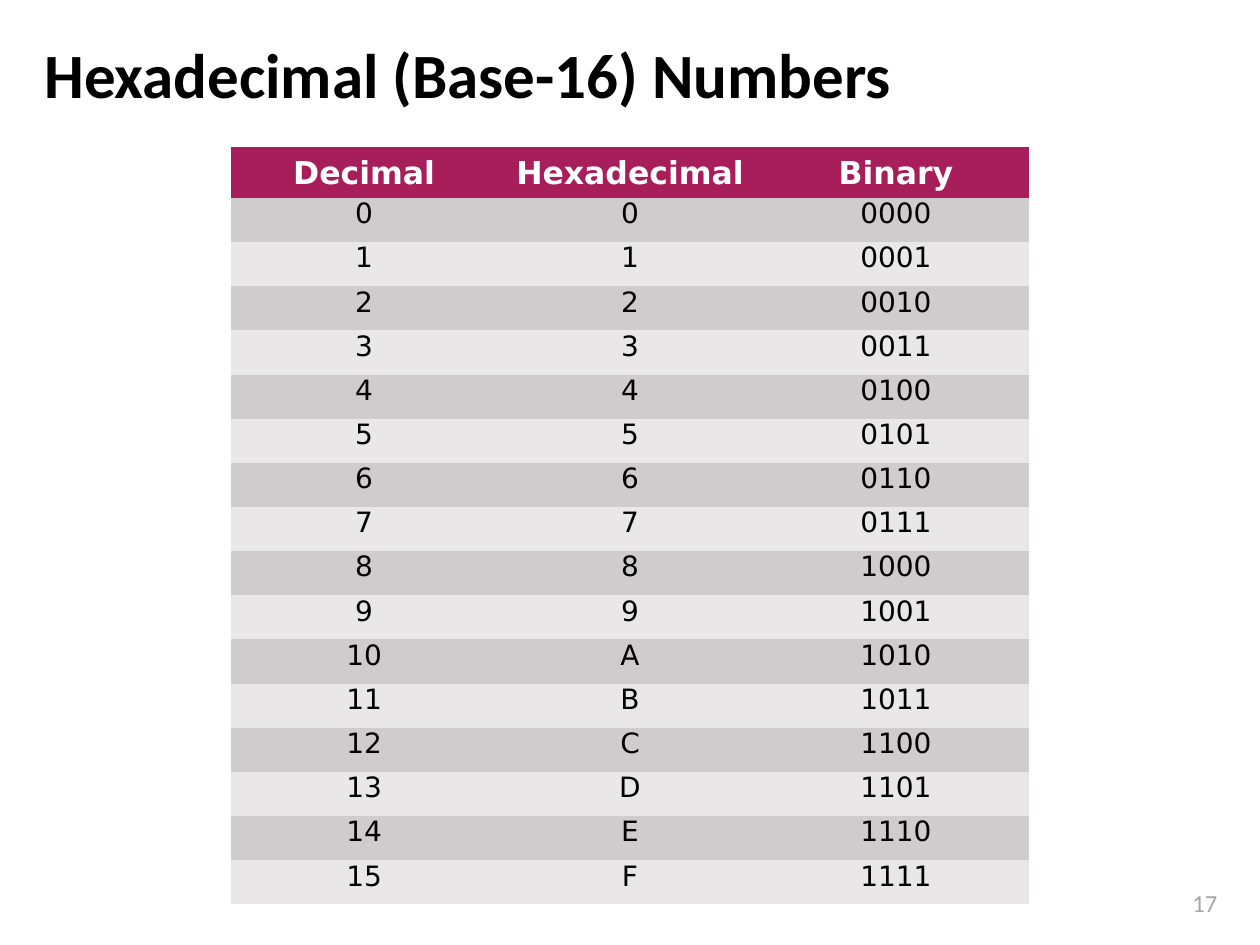
"""Build a slide with a table of decimal, hexadecimal and binary numbers."""
from dataclasses import dataclass

from pptx import Presentation
from pptx.dml.color import RGBColor
from pptx.enum.text import MSO_ANCHOR, MSO_AUTO_SIZE, PP_ALIGN
from pptx.oxml.ns import qn
from pptx.slide import Slide
from pptx.table import _Cell
from pptx.text.text import _Paragraph
from pptx.util import Cm, Length, Pt

BLACK = RGBColor(0x00, 0x00, 0x00)
WHITE = RGBColor(0xFF, 0xFF, 0xFF)
GREY = RGBColor(0xA6, 0xA6, 0xA6)
CRIMSON = RGBColor(0xA8, 0x1E, 0x5B)
DARK_BAND = RGBColor(0xD0, 0xCC, 0xCD)
LIGHT_BAND = RGBColor(0xE9, 0xE7, 0xE8)

HEADINGS = ("Decimal", "Hexadecimal", "Binary")
COLUMN_WIDTH = Cm(5.36)
PLAIN_TABLE_STYLE = "{2D5ABB26-0587-4C30-8999-92F81FD0307C}"


@dataclass(frozen=True)
class TextStyle:
    font: str
    size: int
    color: RGBColor
    bold: bool
    alignment: PP_ALIGN


@dataclass(frozen=True)
class RowStyle:
    text: TextStyle
    fill: RGBColor
    height: Length
    margin: Length
    anchor: MSO_ANCHOR


TITLE_TEXT = TextStyle("Calibri", 36, BLACK, True, PP_ALIGN.LEFT)
NUMBER_TEXT = TextStyle("Calibri", 14, GREY, False, PP_ALIGN.RIGHT)
HEADING_TEXT = TextStyle("DejaVu Sans", 18, WHITE, True, PP_ALIGN.CENTER)
VALUE_TEXT = TextStyle("DejaVu Sans", 16, BLACK, False, PP_ALIGN.CENTER)

HEADING_ROW = RowStyle(HEADING_TEXT, CRIMSON, Cm(1.03), Cm(0.13), MSO_ANCHOR.BOTTOM)
VALUE_ROWS = tuple(
    RowStyle(VALUE_TEXT, band, Cm(0.89), Cm(0), MSO_ANCHOR.TOP)
    for band in (DARK_BAND, LIGHT_BAND)
)


def write(paragraph: _Paragraph, text: str, style: TextStyle) -> None:
    paragraph.text = text
    paragraph.alignment = style.alignment
    for run in paragraph.runs:
        run.font.name = style.font
        run.font.size = Pt(style.size)
        run.font.bold = style.bold
        run.font.color.rgb = style.color


def add_title(slide: Slide, text: str) -> None:
    title = slide.shapes.title
    title.left, title.top, title.width, title.height = Cm(0.64), Cm(0.43), Cm(24.33), Cm(2.11)
    title.text_frame.auto_size = MSO_AUTO_SIZE.NONE
    title.text_frame.vertical_anchor = MSO_ANCHOR.MIDDLE
    write(title.text_frame.paragraphs[0], text, TITLE_TEXT)


def add_slide_number(slide: Slide, number: int) -> None:
    text_box = slide.shapes.add_textbox(Cm(22.86), Cm(17.78), Cm(1.93), Cm(0.86))
    text_box.text_frame.word_wrap = True
    text_box.text_frame.auto_size = MSO_AUTO_SIZE.SHAPE_TO_FIT_TEXT
    write(text_box.text_frame.paragraphs[0], str(number), NUMBER_TEXT)


def fill_cell(cell: _Cell, text: str, style: RowStyle) -> None:
    cell.fill.solid()
    cell.fill.fore_color.rgb = style.fill
    cell.margin_top = cell.margin_bottom = style.margin
    cell.vertical_anchor = style.anchor
    write(cell.text_frame.paragraphs[0], text, style.text)


def add_number_table(slide: Slide) -> None:
    values = [(f"{number}", f"{number:X}", f"{number:04b}") for number in range(16)]
    rows = [(HEADINGS, HEADING_ROW)]
    rows += [(row, VALUE_ROWS[index % 2]) for index, row in enumerate(values)]
    height = sum(style.height for _, style in rows)
    frame = slide.shapes.add_table(
        len(rows), len(HEADINGS), Cm(4.66), Cm(2.96), COLUMN_WIDTH * len(HEADINGS), height
    )
    table = frame.table
    next(frame.element.iter(qn("a:tableStyleId"))).text = PLAIN_TABLE_STYLE
    for column in table.columns:
        column.width = COLUMN_WIDTH
    for table_row, (texts, style) in zip(table.rows, rows):
        table_row.height = style.height
        for cell, text in zip(table_row.cells, texts):
            fill_cell(cell, text, style)


def main() -> None:
    presentation = Presentation()
    presentation.slide_width, presentation.slide_height = Cm(25.4), Cm(19.05)
    slide = presentation.slides.add_slide(presentation.slide_layouts[5])
    add_slide_number(slide, 17)
    add_title(slide, "Hexadecimal (Base-16) Numbers")
    add_number_table(slide)
    presentation.save("out.pptx")


if __name__ == "__main__":
    main()
